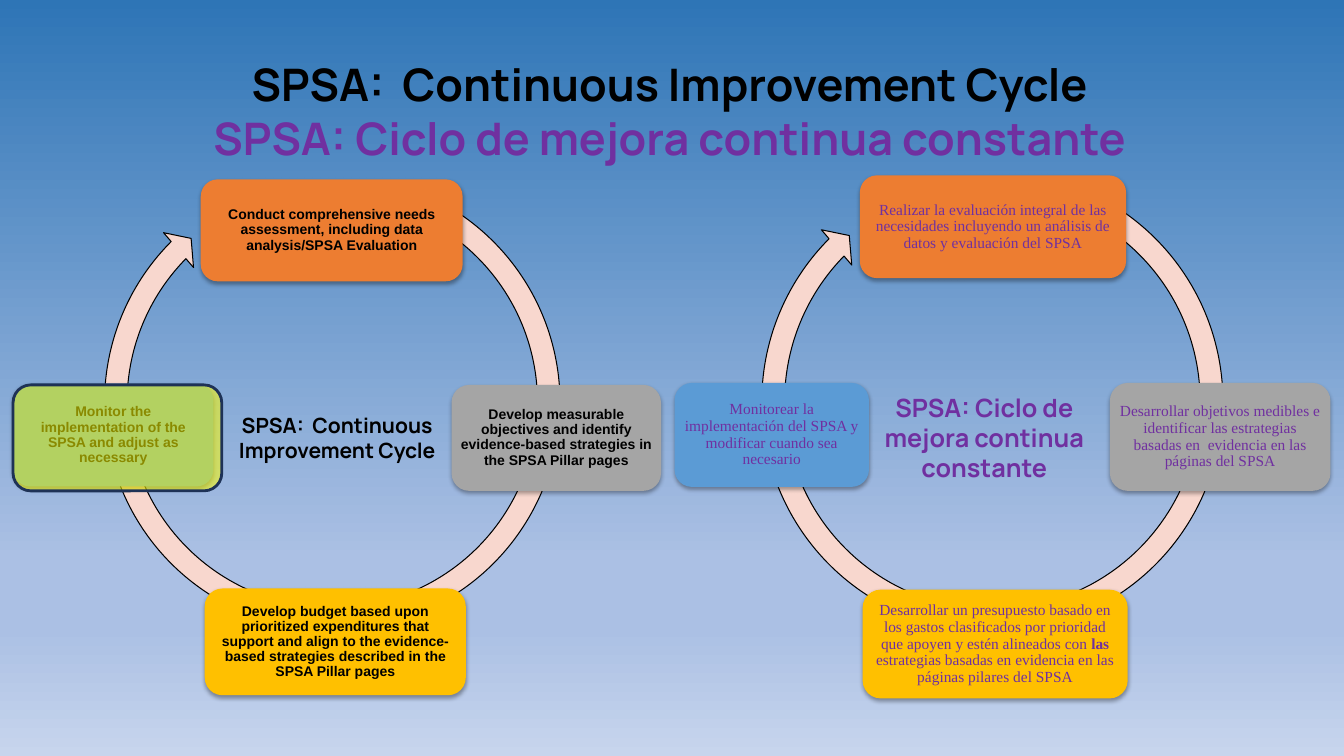
import pptx
import pptx.dml.color
import pptx.enum.shapes
import pptx.enum.text
import pptx.oxml
import pptx.oxml.ns
import pptx.util

Cm = pptx.util.Cm
Pt = pptx.util.Pt
Kind = pptx.enum.shapes.MSO_SHAPE
Align = pptx.enum.text.PP_ALIGN
Anchor = pptx.enum.text.MSO_ANCHOR
Fit = pptx.enum.text.MSO_AUTO_SIZE
qn = pptx.oxml.ns.qn

BLACK, PURPLE = "000000", "7030A0"
FILLS = ["ED7D31", "A5A5A5", "FFC000", "5B9BD5"]
SKY = [(0, "2E75B6"), (74, "ABC0E4"), (83, "ABC0E4"), (100, "C7D5ED")]
NAME = {"en": "SPSA:  Continuous Improvement Cycle",
        "es": "SPSA: Ciclo de mejora continua constante"}

RINGS = [
    {
        "box": (2.34, 4.11, 12.07),
        "turn": [0.047, 2.729, 134.851, 176.02, 0.048],
        "font": {"name": "Arial", "size": Pt(10), "bold": True},
        "color": BLACK,
        "inset": 0.1,
        "hub": (NAME["en"], 15, (2.54, 6.15, 7.24, 1.55)),
        "steps": [
            (["Conduct comprehensive needs assessment, including data "
              "analysis/SPSA Evaluation"], (2.72, 0.41, 6.6, 2.57)),
            (["Develop measurable objectives and identify evidence-based "
              "strategies in the SPSA Pillar pages"], (9.04, 5.59, 5.28, 2.67)),
            (["Develop budget based upon prioritized expenditures that support "
              "and align to the evidence-based strategies described in the "
              "SPSA Pillar pages"], (2.82, 10.72, 6.58, 2.69)),
            (["Monitor the implementation of the SPSA and adjust as necessary"],
             (-2.01, 5.56, 5.05, 2.59)),
        ],
    },
    {
        "box": (18.9, 4.01, 12.22),
        "turn": [0.047, 2.729, 134.812, 176.044, 0.048],
        "font": {"name": "Times New Roman", "size": Pt(11), "bold": False},
        "color": PURPLE,
        "inset": 0.12,
        "hub": (NAME["es"], 18, (2.31, 5.74, 7.19, 2.57)),
        "steps": [
            (["Realizar la evaluación integral de las necesidades incluyendo un "
              "análisis de datos y evaluación del SPSA"], (2.77, 0.41, 6.71, 2.59)),
            (["Desarrollar objetivos medibles e identificar las estrategias "
              "basadas en  evidencia en las páginas del SPSA"],
             (9.07, 5.64, 5.56, 2.72)),
            (["Desarrollar un presupuesto basado en los gastos clasificados por "
              "prioridad que apoyen y estén alineados con ", "las ",
              "estrategias basadas en evidencia en las páginas pilares del SPSA"],
             (2.84, 10.85, 6.68, 2.74)),
            (["Monitorear la implementación del SPSA y modificar cuando sea "
              "necesario"], (-1.9, 5.64, 4.9, 2.62)),
        ],
    },
]


def tint(code):
    return pptx.dml.color.RGBColor.from_string(code)


def apply(item, values):
    for key, value in values.items():
        setattr(item, key, value)


def node(tag, **values):
    item = pptx.oxml.parse_xml(
        f'<a:{tag} xmlns:a="http://schemas.openxmlformats.org/drawingml/2006/main"/>')
    for key, value in values.items():
        item.set(key, str(value))
    return item


def shade(tag, code, alpha=None, **values):
    item = node(tag, **values)
    color = node("srgbClr", val=code)
    item.append(color)
    if alpha is not None:
        color.append(node("alpha", val=alpha * 1000))
    return item


def write(para, texts, font, color):
    para.alignment = Align.CENTER
    for text in texts:
        run = para.add_run()
        run.text = text
        apply(run.font, font)
        run.font.color.rgb = tint(color)


def place(shapes, kind, box, fill, line=None, width=0.75):
    shape = shapes.add_shape(kind, *map(Cm, box))
    shape.shadow.inherit = False
    shape.fill.solid()
    shape.fill.fore_color.rgb = tint(fill)
    if line:
        shape.line.color.rgb = tint(line)
        shape.line.width = Pt(width)
    else:
        shape.line.fill.background()
    return shape


def sky(slide):
    slide.background.fill.gradient()
    grad = slide.element.find(".//" + qn("a:gradFill"))
    stops = grad.find(qn("a:gsLst"))
    for stop in list(stops):
        stops.remove(stop)
    for spot, code in SKY:
        stops.append(shade("gs", code, pos=spot * 1000))
    grad.find(qn("a:lin")).set("ang", "5400000")


def head(slide, box):
    title = slide.shapes.title
    apply(title, dict(zip(("left", "top", "width", "height"), map(Cm, box))))
    frame = title.text_frame
    apply(frame, {"word_wrap": True, "auto_size": Fit.NONE,
                  "vertical_anchor": Anchor.TOP})
    font = {"name": "Manrope", "size": Pt(32), "bold": True}
    write(frame.paragraphs[0], [NAME["en"]], font, BLACK)
    write(frame.add_paragraph(), [NAME["es"]], font, PURPLE)


def step(shapes, box, texts, fill, ring):
    shape = place(shapes, Kind.ROUNDED_RECTANGLE, box, fill)
    shape.element.spPr.find(qn("a:effectLst")).append(
        shade("outerShdw", BLACK, 35, blurRad=40000, dist=23000,
              dir=5400000, rotWithShape=0))
    frame = shape.text_frame
    sides = ("left", "top", "right", "bottom")
    apply(frame, {f"margin_{side}": Cm(ring["inset"]) for side in sides})
    apply(frame, {"word_wrap": True, "vertical_anchor": Anchor.MIDDLE})
    para = frame.paragraphs[0]
    para.line_spacing = 0.9
    write(para, texts, ring["font"], ring["color"])
    if len(texts) > 1:
        para.runs[1].font.bold = True


def cycle(slide, ring):
    left, top, size = ring["box"]
    group = slide.shapes.add_group_shape().shapes
    arrow = place(group, Kind.CIRCULAR_ARROW, (left, top, size, size),
                  "F8D7CE", BLACK)
    for index, value in enumerate(ring["turn"]):
        arrow.adjustments[index] = value
    for (texts, (x, y, w, h)), fill in zip(ring["steps"], FILLS):
        step(group, (left + x, top + y, w, h), texts, fill, ring)
    text, points, (x, y, w, h) = ring["hub"]
    hub = slide.shapes.add_textbox(Cm(left + x), Cm(top + y), Cm(w), Cm(h))
    hub.text_frame.word_wrap = True
    font = {"name": "Manrope", "size": Pt(points), "bold": True}
    write(hub.text_frame.paragraphs[0], [text], font, ring["color"])


def mark(slide, box):
    shape = place(slide.shapes, Kind.ROUNDED_RECTANGLE, box, "FFFF00", "1E3256", 2)
    color = shape.element.spPr.find(qn("a:solidFill")).find(qn("a:srgbClr"))
    color.append(node("alpha", val=54000))


def main():
    deck = pptx.Presentation()
    apply(deck, {"slide_width": Cm(33.87), "slide_height": Cm(19.05)})
    slide = deck.slides.add_slide(deck.slide_layouts[5])
    sky(slide)
    head(slide, (4.5, 1.3, 24.77, 3))
    for ring in RINGS:
        cycle(slide, ring)
    mark(slide, (0.33, 9.7, 5.26, 2.67))
    deck.save("out.pptx")


if __name__ == "__main__":
    main()
